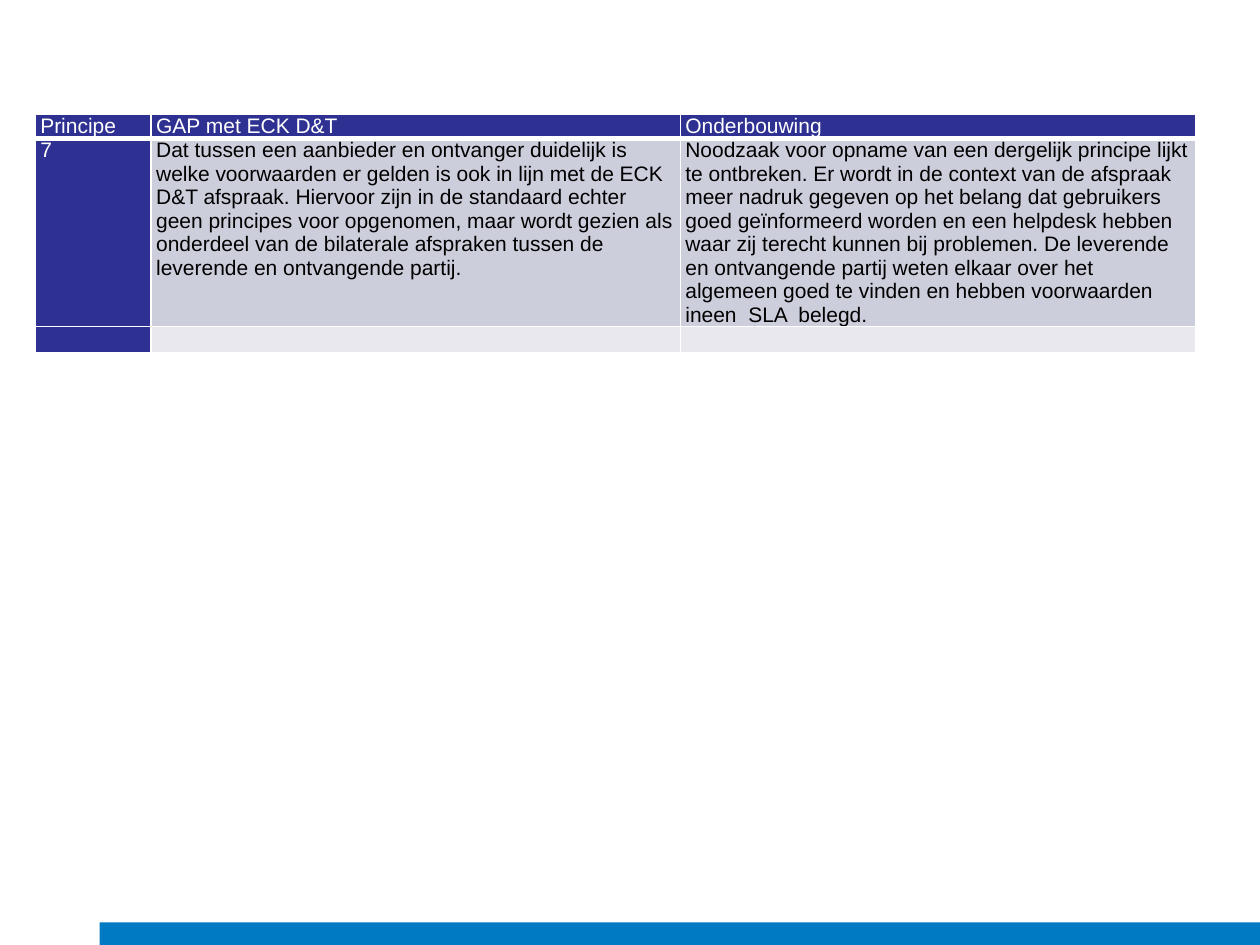
from typing import NamedTuple

from lxml import etree
from pptx import Presentation
from pptx import util as u
from pptx.dml.color import RGBColor
from pptx.enum import shapes
from pptx.oxml import ns

W, H = 10, 7.5
NAVY, BLUE, WHITE, BLACK = "2E3192", "007AC3", "FFFFFF", "000000"
COLS = (0.92, 4.2, 4.09)


class Row(NamedTuple):
    """One table row: its height, the fill of its body cells and its texts."""
    height: float
    fill: str
    texts: tuple[str, str, str]


ROWS = (
    Row(0.19, NAVY, ("Principe", "GAP met ECK D&T", "Onderbouwing")),
    Row(1.49, "CDCEDC", (
        "7",
        "Dat tussen een aanbieder en ontvanger duidelijk is welke voorwaarden er "
        "gelden is ook in lijn met de ECK D&T afspraak. Hiervoor zijn in de "
        "standaard echter geen principes voor opgenomen, maar wordt gezien als "
        "onderdeel van de bilaterale afspraken tussen de leverende en "
        "ontvangende partij.",
        "Noodzaak voor opname van een dergelijk principe lijkt te ontbreken. Er "
        "wordt in de context van de afspraak meer nadruk gegeven op het belang "
        "dat gebruikers goed geïnformeerd worden en een helpdesk hebben waar zij "
        "terecht kunnen bij problemen. De leverende en ontvangende partij weten "
        "elkaar over het algemeen goed te vinden en hebben voorwaarden ineen  "
        "SLA  belegd.")),
    Row(0.19, "E8E8EE", ("", "", "")),
)


def rgb(value: str) -> RGBColor:
    """Return the colour for a hex string."""
    return RGBColor.from_string(value)


def set_borders(cell, bottom: float) -> None:
    """Give a cell thin white borders and a bottom border of its own width."""
    tc_pr = cell._tc.get_or_add_tcPr()
    for side, width in (("L", 1), ("R", 1), ("T", 1), ("B", bottom)):
        ln = etree.SubElement(tc_pr, ns.qn(f"a:ln{side}"), w=str(u.Pt(width)))
        fill = etree.SubElement(ln, ns.qn("a:solidFill"))
        etree.SubElement(fill, ns.qn("a:srgbClr"), val=WHITE)


def fill_cell(cell, words: str, fill: str, bottom: float) -> None:
    """Write and format one table cell."""
    cell.margin_left = cell.margin_right = u.Inches(0.04)
    cell.margin_top = cell.margin_bottom = 0
    set_borders(cell, bottom)
    cell.fill.solid()
    cell.fill.fore_color.rgb = rgb(fill)
    p = cell.text_frame.paragraphs[0]
    if not words:
        etree.SubElement(p._p, ns.qn("a:endParaRPr"), sz="1200")
        return
    r = p.add_run()
    r.text = words
    r.font.name, r.font.size, r.font.bold = "Arial", u.Pt(12), False
    r.font.color.rgb = rgb(WHITE if fill == NAVY else BLACK)


def add_principles(s) -> None:
    """Add the table of principles."""
    table = s.shapes.add_table(
        len(ROWS), len(COLS), u.Inches(0.28), u.Inches(0.91),
        u.Inches(sum(COLS)), u.Inches(sum(row.height for row in ROWS))).table
    table.horz_banding = False
    for column, width in zip(table.columns, COLS):
        column.width = u.Inches(width)
    for i, row in enumerate(ROWS):
        table.rows[i].height = u.Inches(row.height)
        for j, words in enumerate(row.texts):
            fill_cell(table.cell(i, j), words, row.fill if j else NAVY,
                      1 if i else 3)


def add_footer_bar(s) -> None:
    """Add the blue bar along the bottom edge."""
    left, top = 0.79, 7.32
    sp = s.shapes.add_shape(shapes.MSO_SHAPE.RECTANGLE, u.Inches(left),
                            u.Inches(top), u.Inches(W - left), u.Inches(H - top))
    sp.shadow.inherit = False
    sp.fill.solid()
    sp.fill.fore_color.rgb = rgb(BLUE)
    sp.line.fill.background()


def main() -> None:
    """Build and save the slide."""
    prs = Presentation()
    prs.slide_width, prs.slide_height = u.Inches(W), u.Inches(H)
    s = prs.slides.add_slide(prs.slide_layouts[6])
    add_footer_bar(s)
    add_principles(s)
    prs.save("out.pptx")


if __name__ == "__main__":
    main()
